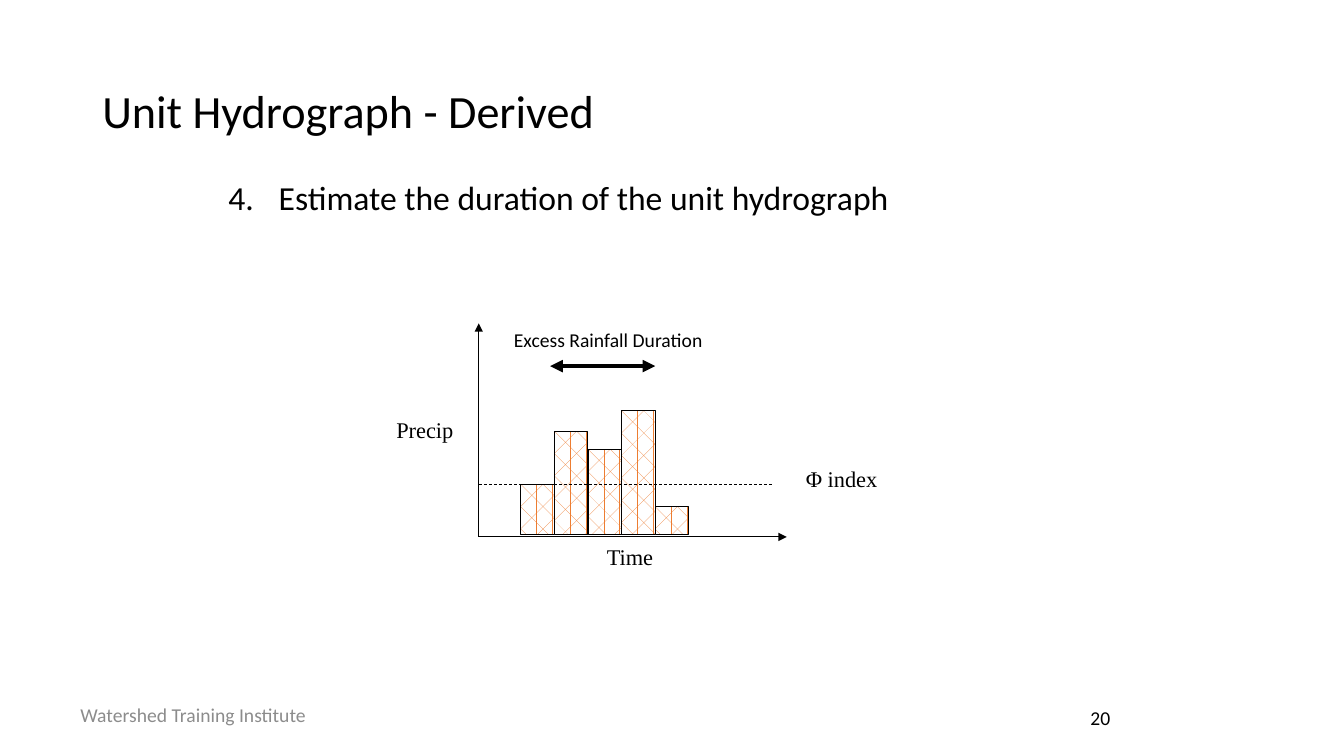
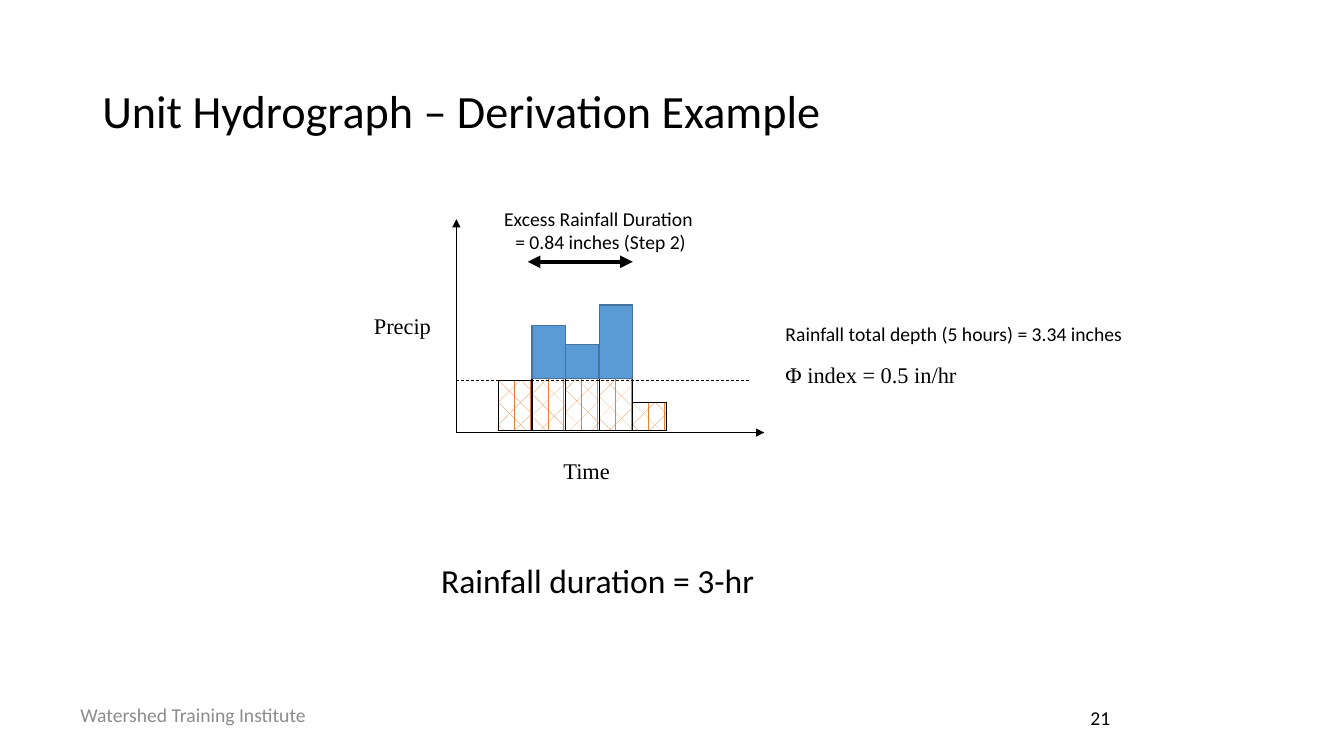
from dataclasses import dataclass
from lxml.etree import SubElement as sub
from pptx import Presentation
from pptx.dml.color import RGBColor as RGB
from pptx.enum.dml import MSO_LINE as Dash, MSO_PATTERN as Pat
from pptx.enum.shapes import MSO_CONNECTOR as Conn, MSO_SHAPE as Shape
from pptx.enum.text import MSO_ANCHOR as Anchor, PP_ALIGN as Align
from pptx.oxml.ns import qn
from pptx.util import Pt


@dataclass(frozen=True)
class Theme:
    ink: RGB = RGB.from_string("000000")
    gray: RGB = RGB.from_string("8C8C8C")
    white: RGB = RGB.from_string("FFFFFF")
    orange: RGB = RGB.from_string("ED7D31")
    blue: RGB = RGB.from_string("5B9BD5")
    edge: RGB = RGB.from_string("43739E")
    sans: str = "Calibri"
    serif: str = "Times New Roman"
    title: int = 33
    body: int = 24
    label: int = 16
    small: int = 14


T = Theme()


def text(slide, words, x, y, w, h, size, font=T.sans, color=T.ink,
         align=Align.LEFT, anchor=Anchor.TOP, wrap=True, lead=1.0):
    box = slide.shapes.add_textbox(Pt(x), Pt(y), Pt(w), Pt(h))
    frame = box.text_frame
    frame.word_wrap = wrap
    frame.vertical_anchor = anchor
    frame.text = words
    for para in frame.paragraphs:
        para.alignment = align
        para.line_spacing = lead
        for run in para.runs:
            run.font.size = Pt(size)
            run.font.name = font
            run.font.color.rgb = color
    return box


def line(slide, x1, y1, x2, y2, width, ends=(), dash=None):
    con = slide.shapes.add_connector(
        Conn.STRAIGHT, Pt(x1), Pt(y1), Pt(x2), Pt(y2))
    con.line.width = Pt(width)
    con.line.color.rgb = T.ink
    if dash:
        con.line.dash_style = dash
    props = con.element.spPr
    for end in ends:
        sub(props.find(qn("a:ln")), qn(f"a:{end}"), type="triangle")
    sub(props, qn("a:effectLst"))


prs = Presentation()
prs.slide_width, prs.slide_height = Pt(960), Pt(540)

# Bars: hatched or not, first bar index, base above the axis, heights
rain = (True, 0, 1.5, (36, 74, 61, 88.5, 20))
excess = (False, 1, 38.5, (38, 24.5, 52.5))
step = 24

# Per slide: title, page, chart origin, Time label offset, bar sets
pages = (
    ("Unit Hydrograph - Derived", 20, 342, 383.5, 51, 1, (rain,)),
    ("Unit Hydrograph – Derivation Example", 21, 326, 309, 36, 14,
     (rain, excess)),
)

slides = []
for title, num, ox, oy, tx, ty, sets in pages:
    slide = prs.slides.add_slide(prs.slide_layouts[6])
    slides.append(slide)

    # Title and footer
    text(slide, title, 66, 29, 828, 104, T.title, anchor=Anchor.MIDDLE,
         lead=0.9)
    text(slide, "Watershed Training Institute", 0, 496, 276, 29, T.small,
         color=T.gray, align=Align.CENTER, anchor=Anchor.MIDDLE)
    text(slide, str(num), 678, 500.5, 216, 29, T.small, align=Align.CENTER)

    # Axes
    line(slide, ox, oy, ox, oy - 152.5, 0.75, ["tailEnd"])
    line(slide, ox, oy, ox + 220, oy, 0.75, ["tailEnd"])
    text(slide, "Time", ox + tx, oy + ty, 114, 27, T.label, T.serif,
         align=Align.CENTER)
    text(slide, "Precip", ox - 66, oy - 89.5, 61, 27, T.label, T.serif)

    # Rainfall bars, hatched for the total and blue for the excess
    for hatched, first, base, highs in sets:
        for i, high in enumerate(highs, first):
            bar = slide.shapes.add_shape(
                Shape.RECTANGLE, Pt(ox + 30 + i * step),
                Pt(oy - base - high), Pt(step), Pt(high))
            bar.shadow.inherit = False
            if hatched:
                bar.fill.patterned()
                bar.fill.pattern = Pat.DIVOT
                bar.fill.fore_color.rgb = T.orange
                bar.fill.back_color.rgb = T.white
                bar.line.color.rgb = T.ink
                bar.line.width = Pt(0.75)
            else:
                bar.fill.solid()
                bar.fill.fore_color.rgb = T.blue
                bar.line.color.rgb = T.edge
                bar.line.width = Pt(1)

    # Index level and duration arrow
    line(slide, ox, oy - 37.5, ox + 210, oy - 37.5, 0.5, dash=Dash.DASH)
    line(slide, ox + 51, oy - 122, ox + 126, oy - 122, 3,
         ["headEnd", "tailEnd"])

# Derived: step and labels
derived, example = slides
item = text(derived, "Estimate the duration of the unit hydrograph",
            156, 126, 648, 110, T.body, lead=0.9)
props = item.text_frame.paragraphs[0]._p.get_or_add_pPr()
props.set("marL", str(Pt(36)))
props.set("indent", str(Pt(-36)))
sub(props, qn("a:buAutoNum"), type="arabicPeriod", startAt="4")
text(derived, "Φ index", 568.5, 328.5, 111, 27, T.label, T.serif)
text(derived, "Excess Rainfall Duration", 360, 230.5, 168, 24, T.small,
     wrap=False)

# Example: values and result
text(example, "Rainfall total depth (5 hours) = 3.34 inches",
     554, 229.5, 282, 22, T.small, lead=0.8)
text(example, "Φ index = 0.5 in/hr", 554, 254.5, 141, 27, T.label, T.serif)
text(example, "Excess Rainfall Duration\n = 0.84 inches (Step 2)",
     352.5, 144, 150, 41, T.small, align=Align.CENTER, wrap=False)
text(example, "Rainfall duration = 3-hr", 308, 396.5, 300, 24, T.body)

prs.save("out.pptx")
